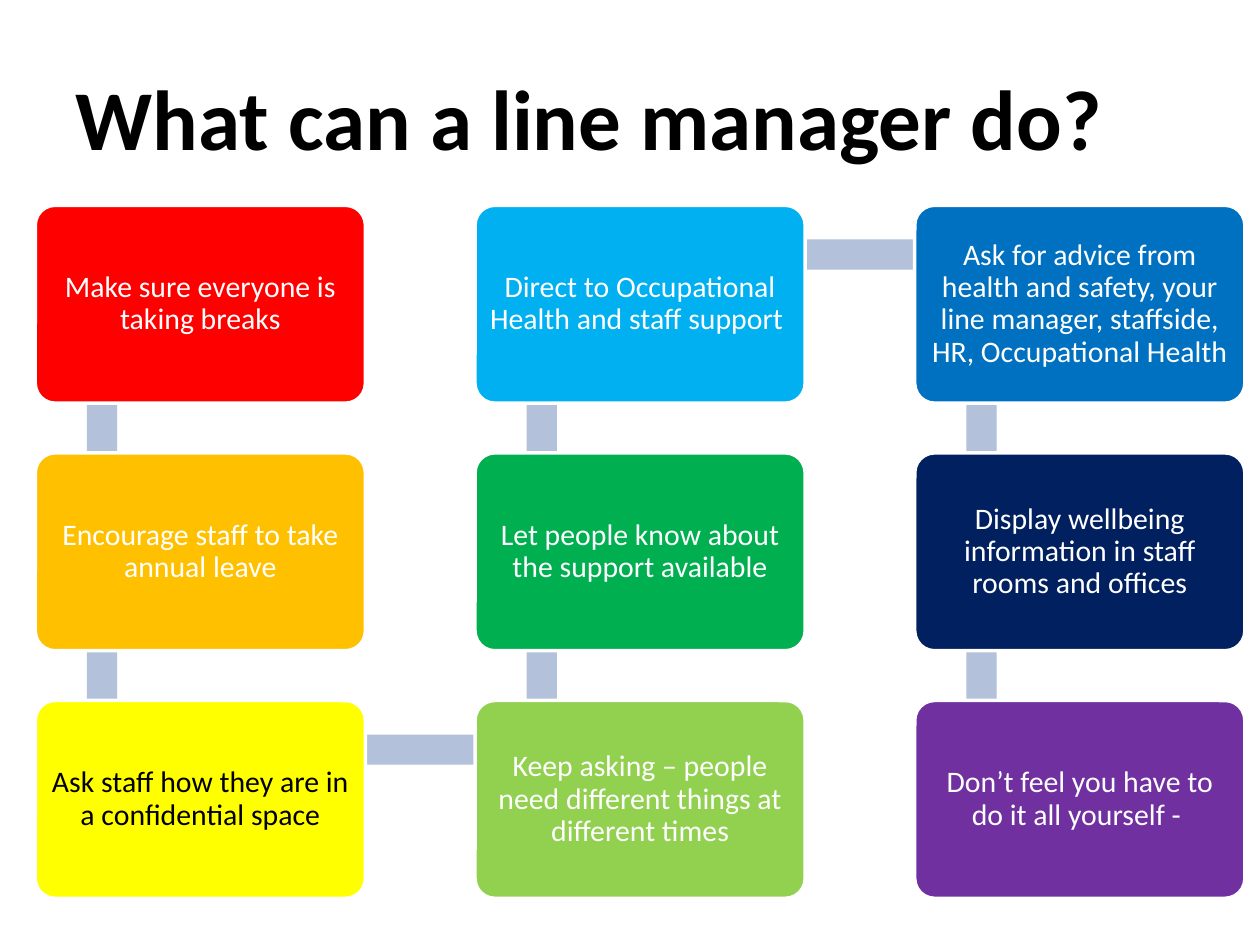
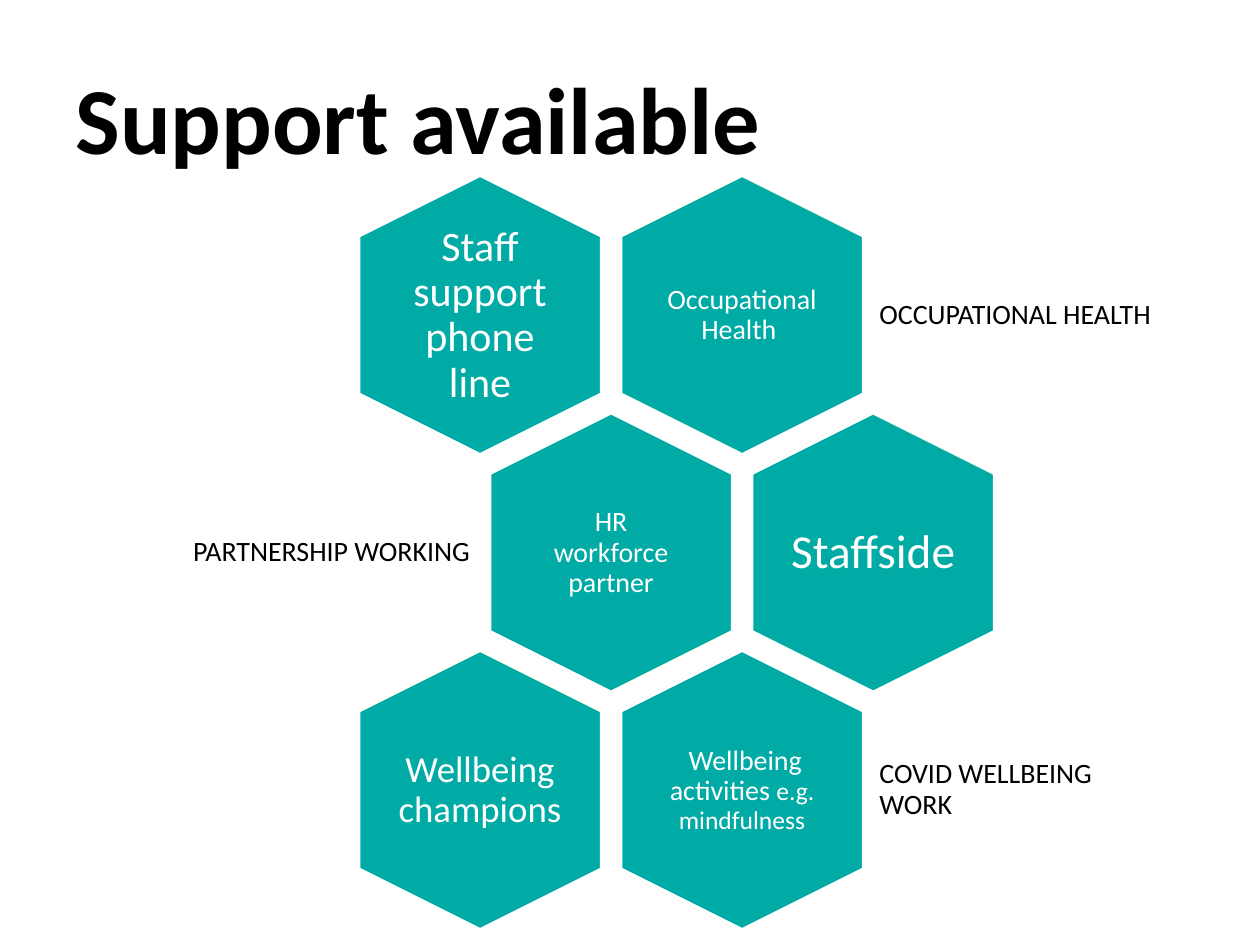
from pptx import Presentation
from pptx.dml.color import RGBColor
from pptx.enum.shapes import MSO_SHAPE
from pptx.enum.text import MSO_ANCHOR, MSO_AUTO_SIZE, PP_ALIGN
from pptx.util import Inches, Pt

FONT = "Calibri"
BLACK = RGBColor(0x00, 0x00, 0x00)
WHITE = RGBColor(0xFF, 0xFF, 0xFF)
TEAL = RGBColor(0x00, 0xAA, 0xA5)
PALE_BLUE = RGBColor(0xB3, 0xC1, 0xDB)
RED = RGBColor(0xFF, 0x00, 0x00)
AMBER = RGBColor(0xFF, 0xC0, 0x00)
YELLOW = RGBColor(0xFF, 0xFF, 0x00)
LIME = RGBColor(0x92, 0xD0, 0x50)
GREEN = RGBColor(0x00, 0xB0, 0x50)
SKY = RGBColor(0x00, 0xB0, 0xF0)
BLUE = RGBColor(0x00, 0x70, 0xC0)
NAVY = RGBColor(0x00, 0x20, 0x60)
PURPLE = RGBColor(0x70, 0x30, 0xA0)

# Steps in order: down the first column, up the second, down the third
STEPS = [
    ("Make sure everyone is taking breaks", RED, WHITE),
    ("Encourage staff to take annual leave", AMBER, WHITE),
    ("Ask staff how they are in a confidential space", YELLOW, BLACK),
    ("Keep asking – people need different things at different times", LIME, WHITE),
    ("Let people know about the support available", GREEN, WHITE),
    ("Direct to Occupational Health and staff support ", SKY, WHITE),
    ("Ask for advice from health and safety, your line manager, staffside, "
     "HR, Occupational Health", BLUE, WHITE),
    ("Display wellbeing information in staff rooms and offices", NAVY, WHITE),
    ("Don’t feel you have to do it all yourself - ", PURPLE, WHITE),
]
ROWS = 3
CARD_W, CARD_H = 2.62, 1.57
BAR = 0.24

# Row, column, text runs with sizes, inset
SUPPORT = [
    (0, 0, [("Staff support phone line", 24)], 0),
    (0, 1, [("Occupational Health ", 16)], 0.07),
    (1, 0, [("HR workforce partner", 16)], 0.07),
    (1, 1, [("Staffside", 27)], 0),
    (2, 0, [("Wellbeing champions", 21)], 0),
    (2, 1, [(" Wellbeing activities ", 16), ("e.g. mindfulness", 14.6)], 0.07),
]
# Row, text, whether the label stands to the right of the hexagons
SIDE_LABELS = [
    (0, "OCCUPATIONAL HEALTH", True),
    (1, "PARTNERSHIP WORKING", False),
    (2, "COVID WELLBEING\vWORK", True),
]
HEX_LONG, HEX_SHORT = 2.22, 1.93
HEX_PITCH_X, HEX_PITCH_Y = 2.08, 1.885


def add_titled_slide(deck, title, size):
    slide = deck.slides.add_slide(deck.slide_layouts[5])
    heading = slide.shapes.title
    heading.left, heading.top = Inches(0.5), Inches(0.3)
    heading.width, heading.height = Inches(9), Inches(1.25)
    write(heading, [(title, size)], BLACK, PP_ALIGN.LEFT, 0.1, 1)
    heading.text_frame.paragraphs[0].runs[0].font.bold = True
    return slide


def write(holder, pieces, color, align=PP_ALIGN.CENTER, inset=0.07, spacing=0.9):
    frame = holder.text_frame
    frame.word_wrap = True
    frame.auto_size = MSO_AUTO_SIZE.NONE
    frame.vertical_anchor = MSO_ANCHOR.MIDDLE
    frame.margin_left = frame.margin_right = Inches(inset)
    frame.margin_top = frame.margin_bottom = Inches(inset)
    paragraph = frame.paragraphs[0]
    paragraph.alignment = align
    paragraph.line_spacing = spacing
    paragraph.text = pieces[0][0]
    for words, _ in pieces[1:]:
        paragraph.add_run().text = words
    sizes = [size for _, size in pieces]
    for index, run in enumerate(paragraph.runs):
        run.font.size = Pt(sizes[min(index, len(sizes) - 1)])
        run.font.name = FONT
        run.font.color.rgb = color


def add_block(slide, preset, left, top, width, height, fill, outlined=True):
    block = slide.shapes.add_shape(
        preset, Inches(left), Inches(top), Inches(width), Inches(height))
    block.shadow.inherit = False
    block.fill.solid()
    block.fill.fore_color.rgb = fill
    if outlined:
        block.line.color.rgb = WHITE
        block.line.width = Pt(2)
    else:
        block.line.fill.background()
    return block


def add_label(slide, left, top, width, height, pieces, color, **style):
    label = slide.shapes.add_textbox(
        Inches(left), Inches(top), Inches(width), Inches(height))
    write(label, pieces, color, **style)


def add_step_snake(slide, left, top, pitch_x, pitch_y):
    corners = []
    for index in range(len(STEPS)):
        column, row = divmod(index, ROWS)
        if column % 2:
            row = ROWS - 1 - row
        corners.append((left + column * pitch_x, top + row * pitch_y))

    # Bars that join each step to the next, behind the cards
    for (x, y), (next_x, next_y) in zip(corners, corners[1:]):
        if x == next_x:
            bar = (x + 0.41, min(y, next_y) + 0.39, BAR, pitch_y)
        else:
            bar = (x + 0.53, y + 0.27, pitch_x, BAR)
        add_block(slide, MSO_SHAPE.RECTANGLE, *bar, PALE_BLUE, outlined=False)

    # Step cards
    for (x, y), (text, fill, color) in zip(corners, STEPS):
        card = add_block(slide, MSO_SHAPE.ROUNDED_RECTANGLE, x, y, CARD_W, CARD_H, fill)
        card.adjustments[0] = 0.1
        write(card, [(text, 17)], color)


def add_support_honeycomb(slide, center_x, center_y):
    """Place the cells from the centre of the first one; odd rows shift half a cell."""
    def cell_center(row, column):
        return (center_x + (column + row % 2 / 2) * HEX_PITCH_X,
                center_y + row * HEX_PITCH_Y)

    # Upright hexagons and their text
    for row, column, pieces, inset in SUPPORT:
        x, y = cell_center(row, column)
        cell = add_block(slide, MSO_SHAPE.HEXAGON, x - HEX_LONG / 2, y - HEX_SHORT / 2,
                         HEX_LONG, HEX_SHORT, TEAL)
        cell.adjustments[0] = 0.25
        cell.rotation = 90
        add_label(slide, x - 0.665, y - 0.76, 1.33, 1.53, pieces, WHITE, inset=inset)

    # Labels beside the rows
    for row, text, on_right in SIDE_LABELS:
        x, y = cell_center(row, 1 if on_right else 0)
        width = 2.47 if on_right else 2.39
        left = x + 1.02 if on_right else x - 1.05 - width
        align = PP_ALIGN.LEFT if on_right else PP_ALIGN.RIGHT
        add_label(slide, left, y - 0.665, width, 1.33, [(text, 16)], BLACK, align=align)


def main():
    deck = Presentation()
    deck.slide_width, deck.slide_height = Inches(10), Inches(7.5)

    manager = add_titled_slide(deck, "What can a line manager do?", 48.6)
    add_step_snake(manager, left=0.28, top=1.63, pitch_x=3.49, pitch_y=1.965)

    support = add_titled_slide(deck, "Support available", 54)
    add_support_honeycomb(support, center_x=3.81, center_y=2.5)

    deck.save("out.pptx")


if __name__ == "__main__":
    main()
